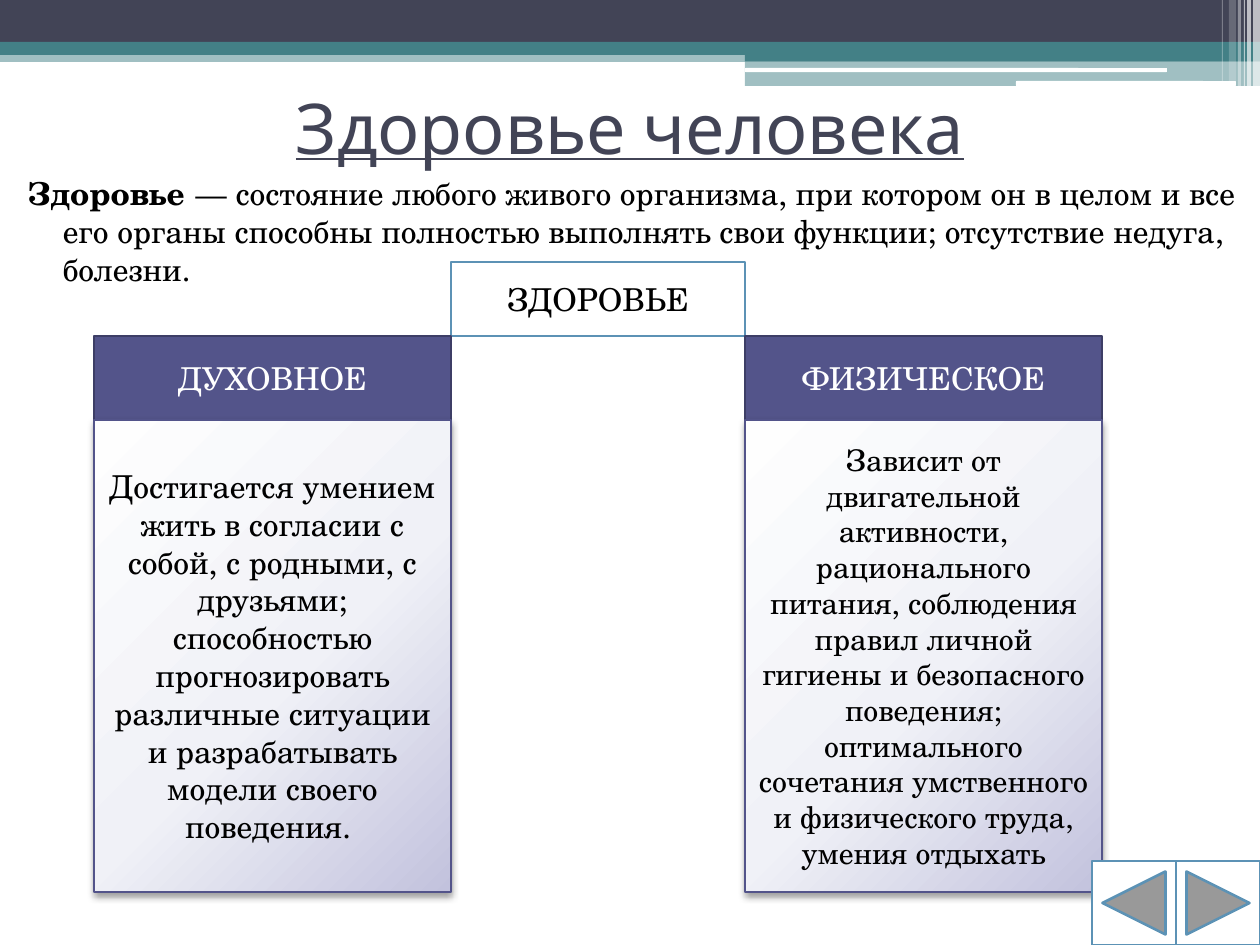
from lxml import etree
from pptx import Presentation
from pptx import util as u
from pptx.dml.color import RGBColor
from pptx.enum import shapes, text
from pptx.oxml import parse_xml
from pptx.oxml.ns import qn

PX = u.Inches(1) / 126
SERIF = "TeX Gyre Schola"
DARK = RGBColor(0x42, 0x44, 0x56)
TEAL = RGBColor(0x43, 0x80, 0x86)
BLUE = RGBColor(0x5C, 0x92, 0xB5)
PLUM = RGBColor(0x53, 0x54, 0x8A)
EDGE = RGBColor(0x3D, 0x3E, 0x66)
WHITE = RGBColor(255, 255, 255)
BLACK = RGBColor(0, 0, 0)
NS = 'xmlns:a="http://schemas.openxmlformats.org/drawingml/2006/main"'
GLOW = f"""<a:gradFill {NS} rotWithShape="1"><a:gsLst>
<a:gs pos="0"><a:srgbClr val="FEFEFE"/></a:gs>
<a:gs pos="55000"><a:srgbClr val="F0F1F7"/></a:gs>
<a:gs pos="100000"><a:srgbClr val="C2C2DD"/></a:gs></a:gsLst>
<a:path path="circle"><a:fillToRect l="-40000" t="-90000" r="140000" b="190000"/></a:path>
</a:gradFill>"""
SHADE = f"""<a:outerShdw {NS} blurRad="52000" dist="25400" dir="5400000" rotWithShape="0">
<a:srgbClr val="000000"><a:alpha val="40000"/></a:srgbClr></a:outerShdw>"""

prs = Presentation()
prs.slide_width, prs.slide_height = u.Inches(10), u.Inches(7.5)
slide = prs.slides.add_slide(prs.slide_layouts[6])


def add(box, fill, line=None, width=1.5, kind=shapes.MSO_SHAPE.RECTANGLE):
    """Add a flat preset shape; box is left, top, width, height in px."""
    shape = slide.shapes.add_shape(kind, *(round(n * PX) for n in box))
    shape.shadow.inherit = False
    shape.fill.solid()
    shape.fill.fore_color.rgb = fill
    if line is None:
        shape.line.fill.background()
    else:
        shape.line.color.rgb = line
        shape.line.width = u.Pt(width)
    return shape


def write(shape, words, size=18, color=BLACK, face=SERIF):
    """Put centred text in a shape and return its paragraph."""
    frame = shape.text_frame
    frame.word_wrap = True
    frame.vertical_anchor = text.MSO_ANCHOR.MIDDLE
    para = frame.paragraphs[0]
    para.text = words
    para.alignment = text.PP_ALIGN.CENTER
    para.font.size = u.Pt(size)
    para.font.name = face
    para.font.color.rgb = color
    return para


# Header bands, then white rules and stripes over them
BAR, PILL = shapes.MSO_SHAPE.RECTANGLE, shapes.MSO_SHAPE.ROUNDED_RECTANGLE
for box, fill, alpha, kind in (
    ((0, 50, 1260, 12), TEAL, 50, BAR),
    ((0, 0, 1260, 42), DARK, 100, BAR),
    ((0, 42, 1260, 13), TEAL, 100, BAR),
    ((745, 49, 515, 12), TEAL, 100, BAR),
    ((745, 61, 515, 25), TEAL, 50, BAR),
    ((745, 68, 422, 4), WHITE, 100, PILL),
    ((1016, 81, 220, 5), WHITE, 100, PILL),
    ((1253, 0, 7, 86), WHITE, 65, BAR),
    ((1247, 0, 4, 86), WHITE, 65, BAR),
    ((1244, 0, 1, 86), WHITE, 60, BAR),
    ((1238, 0, 3, 86), WHITE, 40, BAR),
    ((1229, 0, 7, 81), WHITE, 20, BAR),
    ((1222, 0, 1, 81), WHITE, 30, BAR),
):
    band = add(box, fill, kind=kind)
    if alpha < 100:
        tint = band._element.spPr.find(qn("a:solidFill"))[0]
        etree.SubElement(tint, qn("a:alpha"), val=str(alpha * 1000))

# Title and definition
title = slide.shapes.add_textbox(*(round(n * PX) for n in (63, 53, 1134, 147)))
write(title, "Здоровье человека", 40, DARK, "Karla").font.underline = True

body = slide.shapes.add_textbox(*(round(n * PX) for n in (0, 168, 1260, 746)))
para = write(body, "")
body.text_frame.vertical_anchor = text.MSO_ANCHOR.TOP
para.alignment = text.PP_ALIGN.LEFT
para.space_before = u.Pt(3)
props = para._p.get_or_add_pPr()
props.set("marL", str(u.Inches(0.4)))
props.set("indent", str(u.Inches(-0.28)))
term = para.add_run()
term.text = "Здоровье"
term.font.bold = True
para.add_run().text = (
    "\u00a0— состояние любого живого организма, при котором он в целом и все "
    "его органы способны полностью выполнять свои функции; отсутствие недуга, болезни."
)

# Scheme: one root, two columns of head and card
write(add((451, 262, 294, 74), WHITE, BLUE), "ЗДОРОВЬЕ")
for left, head, words, size in (
    (94, "ДУХОВНОЕ",
     "Достигается умением жить в согласии с собой, с родными, с друзьями; "
     "способностью прогнозировать различные ситуации и разрабатывать модели "
     "своего поведения. ", 18),
    (745, "ФИЗИЧЕСКОЕ",
     "Зависит от двигательной активности, рационального питания, соблюдения "
     "правил личной гигиены и безопасного поведения; оптимального сочетания "
     "умственного и физического труда, умения отдыхать", 17),
):
    write(add((left, 336, 357, 84), PLUM, EDGE), head, color=WHITE)
    card = add((left, 420, 357, 472), WHITE, PLUM, 0.75)
    look = card._element.spPr
    look.replace(look.find(qn("a:solidFill")), parse_xml(GLOW))
    look.find(qn("a:effectLst")).append(parse_xml(SHADE))
    write(card, words, size)

# Navigation buttons
for left, kind in (
    (1176, shapes.MSO_SHAPE.ACTION_BUTTON_FORWARD_OR_NEXT),
    (1092, shapes.MSO_SHAPE.ACTION_BUTTON_BACK_OR_PREVIOUS),
):
    add((left, 861, 84, 84), WHITE, BLUE, kind=kind)

prs.save("out.pptx")
